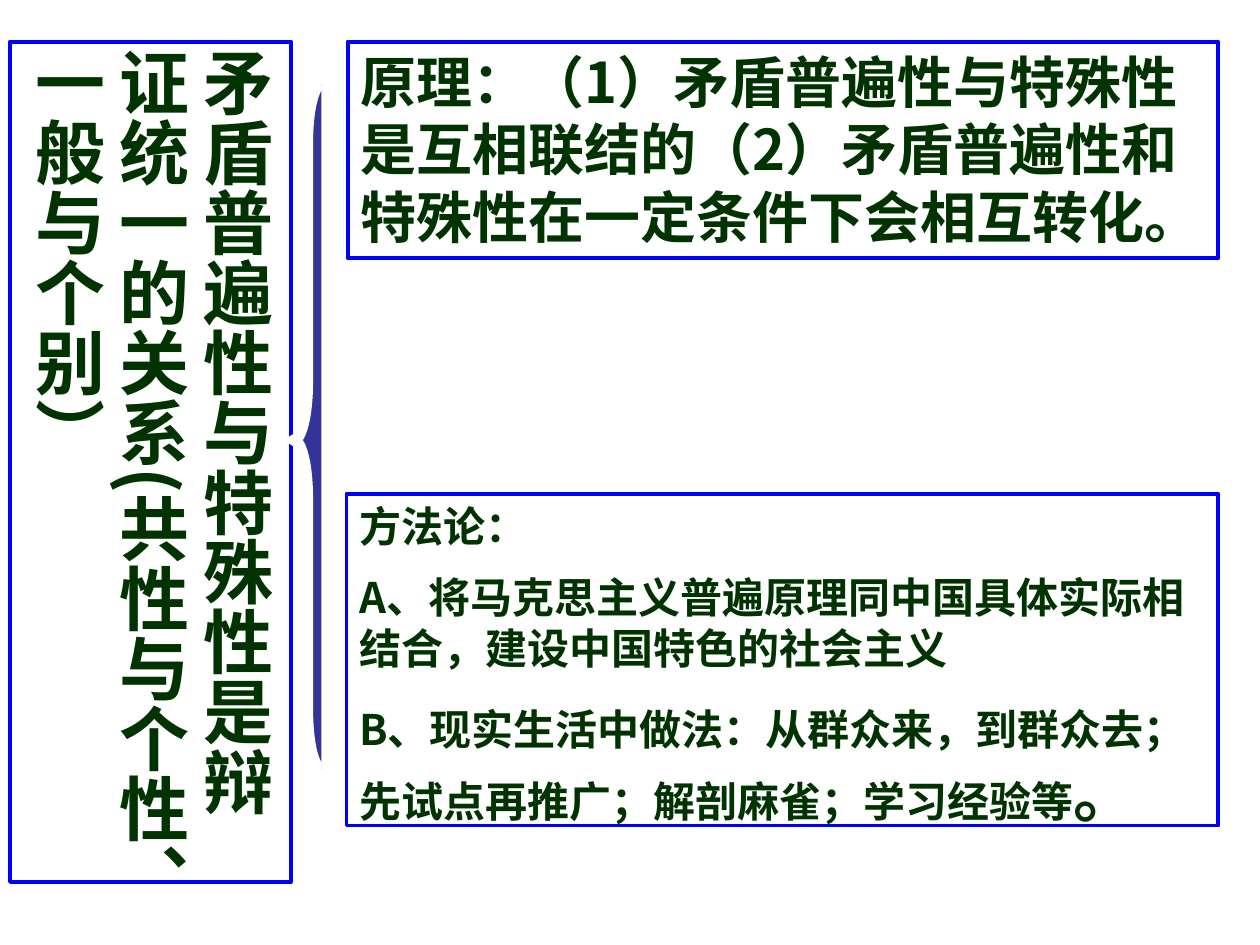
from dataclasses import dataclass

import pptx
import pptx.dml.color
import pptx.enum.shapes
import pptx.enum.text
import pptx.util
from lxml import etree
from pptx.oxml.ns import qn
from pptx.util import Inches, Pt

BLUE = pptx.dml.color.RGBColor(0x00, 0x00, 0xFF)
INDIGO = pptx.dml.color.RGBColor(0x33, 0x33, 0x99)
DARK_GREEN = pptx.dml.color.RGBColor(0x00, 0x33, 0x00)
WHITE = pptx.dml.color.RGBColor(0xFF, 0xFF, 0xFF)
FONT = "Noto Sans CJK SC"
TITLE_AND_CONTENT = 1
SHAPES = pptx.enum.shapes.MSO_SHAPE


@dataclass
class Span:
    text: str
    size: int


@dataclass
class Panel:
    left: float
    top: float
    width: float
    height: float
    paragraphs: list[list[Span]]


THESIS = Panel(0.08, 0.33, 2.23, 6.67, [
    [Span("矛盾普遍性与特殊性是辩证统一的关系(共性与个性、一般与个别）", 40)],
])
PRINCIPLE = Panel(2.76, 0.33, 6.91, 1.72, [
    [Span("原理：（1）矛盾普遍性与特殊性是互相联结的（2）矛盾普遍性和"
          "特殊性在一定条件下会相互转化。", 32)],
])
METHOD = Panel(2.75, 3.92, 6.92, 2.73, [
    [Span("方法论：", 24)],
    [Span("A、将马克思主义普遍原理同中国具体实际相结合，建设中国特色的社会主义", 24)],
    [Span("B、现实生活中做法：从群众来，到群众去；先试点再推广；"
          "解剖麻雀；学习经验等", 24), Span("。", 36)],
])


def set_attributes(target, values: dict) -> None:
    for name, value in values.items():
        setattr(target, name, value)


def format_paragraph(para) -> None:
    """Align left without bullet or indent, half a line before."""
    para.alignment = pptx.enum.text.PP_ALIGN.LEFT
    properties = para._p.get_or_add_pPr()
    properties.set("marL", "0")
    properties.set("indent", "0")
    before = etree.SubElement(properties, qn("a:spcBef"))
    etree.SubElement(before, qn("a:spcPct")).set("val", "50000")
    etree.SubElement(properties, qn("a:buNone"))


def add_span(para, span: Span) -> None:
    run = para.add_run()
    run.text = span.text
    set_attributes(run.font, {"name": FONT, "size": Pt(span.size), "bold": True})
    run.font.color.rgb = DARK_GREEN
    east_asian = etree.SubElement(run.font._element, qn("a:ea"))
    east_asian.set("typeface", FONT)


def fill_panel(box, panel: Panel, vertical: bool = False) -> None:
    set_attributes(box, {name: Inches(getattr(panel, name))
                         for name in ("left", "top", "width", "height")})
    box.fill.background()
    box.line.color.rgb = BLUE
    box.line.width = Pt(2.25)
    frame = box.text_frame
    set_attributes(frame, {
        "margin_left": Inches(0.1), "margin_right": Inches(0.1),
        "margin_top": Inches(0.05), "margin_bottom": Inches(0.05),
        "word_wrap": True,
        "vertical_anchor": pptx.enum.text.MSO_ANCHOR.TOP,
        "auto_size": pptx.enum.text.MSO_AUTO_SIZE.SHAPE_TO_FIT_TEXT,
    })
    if vertical:
        frame._txBody.bodyPr.set("vert", "eaVert")
    for index, spans in enumerate(panel.paragraphs):
        para = frame.add_paragraph() if index else frame.paragraphs[0]
        format_paragraph(para)
        for span in spans:
            add_span(para, span)


def add_brace(page) -> None:
    brace = page.shapes.add_shape(SHAPES.LEFT_BRACE, Inches(2.33), Inches(0.67),
                                  Inches(0.22), Inches(5.43))
    brace.shadow.inherit = False
    brace.adjustments[0] = 2.1
    brace.adjustments[1] = 0.52
    brace.fill.solid()
    brace.fill.fore_color.rgb = INDIGO
    brace.line.color.rgb = WHITE
    brace.line.width = Pt(6.5)


def main() -> None:
    deck = pptx.Presentation()
    set_attributes(deck, {"slide_width": Inches(10), "slide_height": Inches(7.5)})
    page = deck.slides.add_slide(deck.slide_layouts[TITLE_AND_CONTENT])
    fill_panel(page.shapes.title, THESIS, vertical=True)
    add_brace(page)
    principle_box = page.shapes.add_shape(SHAPES.RECTANGLE, 0, 0, 0, 0)
    principle_box.shadow.inherit = False
    fill_panel(principle_box, PRINCIPLE)
    fill_panel(page.placeholders[1], METHOD)
    deck.save("out.pptx")


if __name__ == "__main__":
    main()
